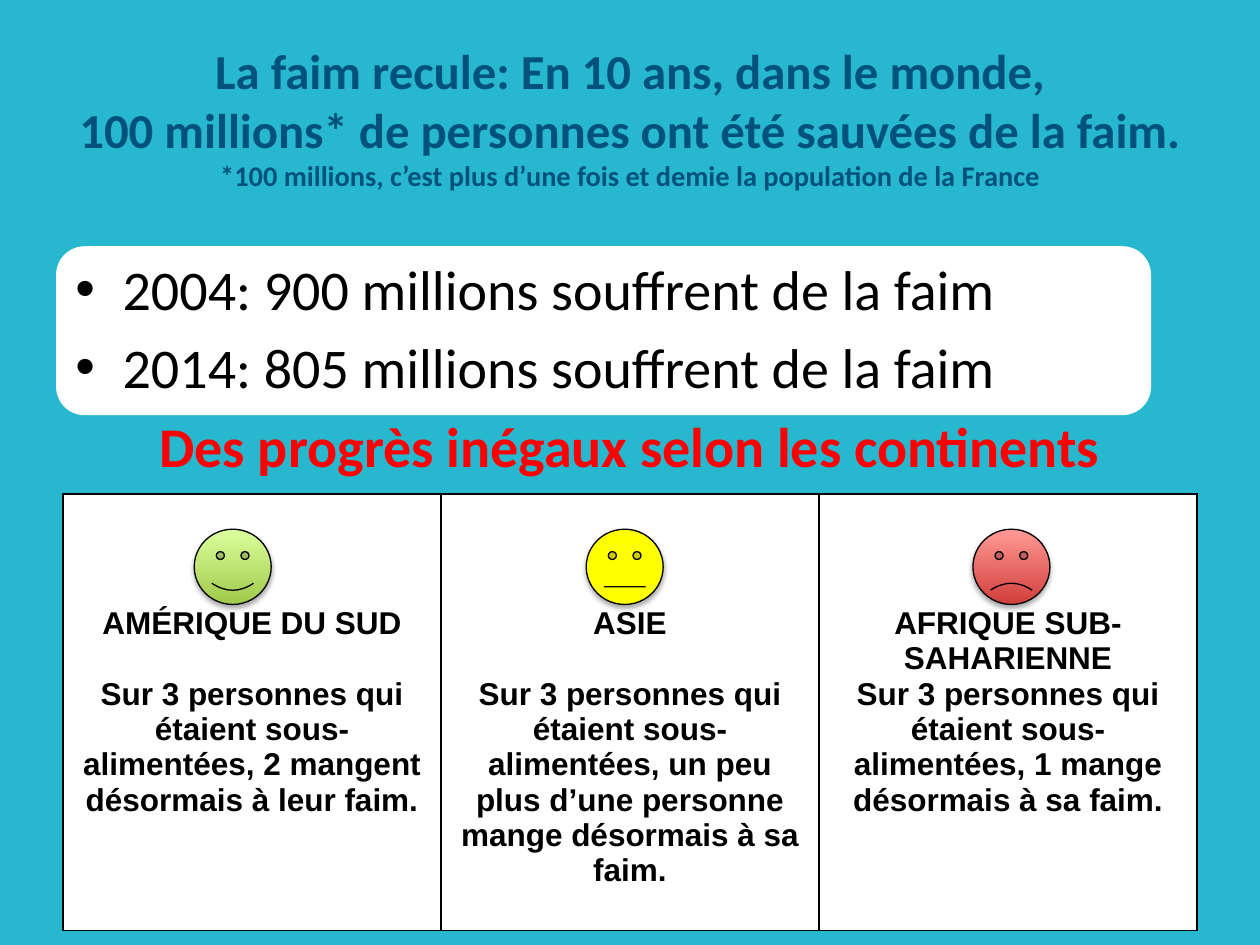
import lxml.etree
import pptx
import pptx.dml.color
import pptx.enum.shapes
import pptx.enum.text
import pptx.oxml.ns
import pptx.util

Pt = pptx.util.Pt
RGBColor = pptx.dml.color.RGBColor
Shape = pptx.enum.shapes.MSO_SHAPE
Align = pptx.enum.text.PP_ALIGN
Anchor = pptx.enum.text.MSO_ANCHOR
qn = pptx.oxml.ns.qn

TURQUOISE = RGBColor(0x27, 0xB8, 0xCF)
NAVY = RGBColor(0x00, 0x52, 0x7D)
WHITE = RGBColor(0xFF, 0xFF, 0xFF)
BLACK = RGBColor(0x00, 0x00, 0x00)
RED = RGBColor(0xFF, 0x00, 0x00)
YELLOW = RGBColor(0xFF, 0xFF, 0x00)
GREEN_DARK, GREEN_LIGHT = RGBColor(0xA0, 0xC9, 0x4A), RGBColor(0xDB, 0xFF, 0x9C)
ROSE_DARK, ROSE_LIGHT = RGBColor(0xD1, 0x3F, 0x3B), RGBColor(0xFF, 0x99, 0x95)

CELL_LINE = 20.2  # height of one line of cell text

TITLE = [
    ("La faim recule: En 10 ans, dans le monde,", 27.9),
    ("100 millions* de personnes ont été sauvées de la faim.", 27.9),
    ("*100 millions, c’est plus d’une fois et demie la population de la France", 16.2),
]
FIGURES = [
    "2004: 900 millions souffrent de la faim",
    "2014: 805 millions souffrent de la faim",
]
SUBTITLE = "Des progrès inégaux selon les continents"

# Name, result, gap before the result, face offset in the column, smile, face colours
CONTINENTS = [
    ("AMÉRIQUE DU SUD",
     "Sur 3 personnes qui étaient sous-alimentées, 2 mangent désormais à leur faim.",
     CELL_LINE, 75, 0.047, (GREEN_DARK, GREEN_LIGHT)),
    ("ASIE",
     "Sur 3 personnes qui étaient sous-alimentées, un peu plus d’une personne "
     "mange désormais à sa faim.",
     CELL_LINE, 83, 0, (YELLOW,)),
    ("AFRIQUE SUB-SAHARIENNE",
     "Sur 3 personnes qui étaient sous-alimentées, 1 mange désormais à sa faim.",
     0, 88, -0.046, (ROSE_DARK, ROSE_LIGHT)),
]


def set_font(font, name, size, color, bold=False):
    font.name, font.size, font.bold = name, Pt(size), bold
    font.color.rgb = color


def add_text_frame(page, left, top, width, height, anchor):
    box = page.shapes.add_textbox(Pt(left), Pt(top), Pt(width), Pt(height))
    frame = box.text_frame
    frame.word_wrap = True
    frame.vertical_anchor = anchor
    return frame


def add_title(page, left, top, width, height):
    frame = add_text_frame(page, left, top, width, height, Anchor.MIDDLE)
    para = frame.paragraphs[0]
    para.alignment = Align.CENTER
    for index, (text, size) in enumerate(TITLE):
        if index:
            para.add_line_break()
        span = para.add_run()
        span.text = text
        set_font(span.font, "Calibri", size, NAVY, True)


def add_figures(page, left, top, width, height):
    # White panel behind the two figures
    panel = page.shapes.add_shape(
        Shape.ROUNDED_RECTANGLE, Pt(left - 3.6), Pt(top - 0.7), Pt(625), Pt(95.8))
    panel.shadow.inherit = False
    panel.fill.solid()
    panel.fill.fore_color.rgb = WHITE
    panel.line.color.rgb = WHITE
    panel.line.width = Pt(0.75)

    # Bulleted figures and the centred subtitle
    frame = add_text_frame(page, left, top, width, height, Anchor.TOP)
    for index, text in enumerate(FIGURES + [SUBTITLE]):
        para = frame.add_paragraph() if index else frame.paragraphs[0]
        para.text = text
        para.space_before = Pt(6.4 if index else 0)
        properties = para._p.get_or_add_pPr()
        properties.set("marL", str(Pt(27)))
        properties.set("indent", str(-Pt(27)))
        if text == SUBTITLE:
            para.alignment = Align.CENTER
            set_font(para.font, "Calibri", 32, RED, True)
        else:
            set_font(para.font, "Calibri", 32, BLACK)
            bullet_font = lxml.etree.Element(qn("a:buFont"), typeface="Arial")
            bullet = lxml.etree.Element(qn("a:buChar"), char="•")
            properties.insert_element_before(bullet_font, "a:defRPr")
            properties.insert_element_before(bullet, "a:defRPr")


def add_borders(cell):
    properties = cell._tc.get_or_add_tcPr()
    for side in ("a:lnL", "a:lnR", "a:lnT", "a:lnB"):
        border = lxml.etree.SubElement(properties, qn(side), w=str(Pt(1)))
        fill = lxml.etree.SubElement(border, qn("a:solidFill"))
        lxml.etree.SubElement(fill, qn("a:srgbClr"), val=str(BLACK))


def add_face(page, left, top, smile, colors):
    face = page.shapes.add_shape(Shape.SMILEY_FACE, Pt(left), Pt(top), Pt(44), Pt(43))
    face.adjustments[0] = smile
    face.line.color.rgb = BLACK
    face.line.width = Pt(0.75)
    if len(colors) == 1:
        face.fill.solid()
        face.fill.fore_color.rgb = colors[0]
    else:
        face.fill.gradient()
        face.fill.gradient_angle = 90
        for stop, color, position in zip(face.fill.gradient_stops, colors, (0, 1)):
            stop.color.rgb = color
            stop.position = position

    # Soft shadow below
    face.shadow.inherit = False
    effects = face._element.spPr.find(qn("a:effectLst"))
    shadow = lxml.etree.SubElement(
        effects, qn("a:outerShdw"), blurRad=str(Pt(3.1)), dist=str(Pt(1.8)),
        dir="5400000", rotWithShape="0")
    color = lxml.etree.SubElement(shadow, qn("a:srgbClr"), val=str(BLACK))
    lxml.etree.SubElement(color, qn("a:alpha"), val="35000")


def add_continents(page, left, top, width, height):
    table = page.shapes.add_table(
        1, len(CONTINENTS), Pt(left), Pt(top), Pt(width), Pt(height)).table
    table.first_row = table.horz_banding = False
    column_width = width / len(CONTINENTS)
    for index, (name, result, gap, offset, smile, colors) in enumerate(CONTINENTS):
        cell = table.cell(0, index)
        add_borders(cell)
        cell.fill.solid()
        cell.fill.fore_color.rgb = WHITE
        cell.margin_top = Pt(3.6 + 3 * CELL_LINE)  # room for the face
        cell.text = name + "\n" + result
        for para in cell.text_frame.paragraphs:
            para.alignment = Align.CENTER
            set_font(para.font, "Arial", 18, BLACK, True)
        cell.text_frame.paragraphs[1].space_before = Pt(gap)
        add_face(page, left + index * column_width + offset, top + 20.2, smile, colors)


def main():
    deck = pptx.Presentation()
    deck.slide_width, deck.slide_height = Pt(720), Pt(540)
    page = deck.slides.add_slide(deck.slide_layouts[6])
    page.background.fill.solid()
    page.background.fill.fore_color.rgb = TURQUOISE
    add_title(page, 0, 21.6, 720, 90)
    add_figures(page, 36, 141.8, 648, 369.4)
    add_continents(page, 36, 282.2, 648, 249.5)
    deck.save("out.pptx")


if __name__ == "__main__":
    main()
